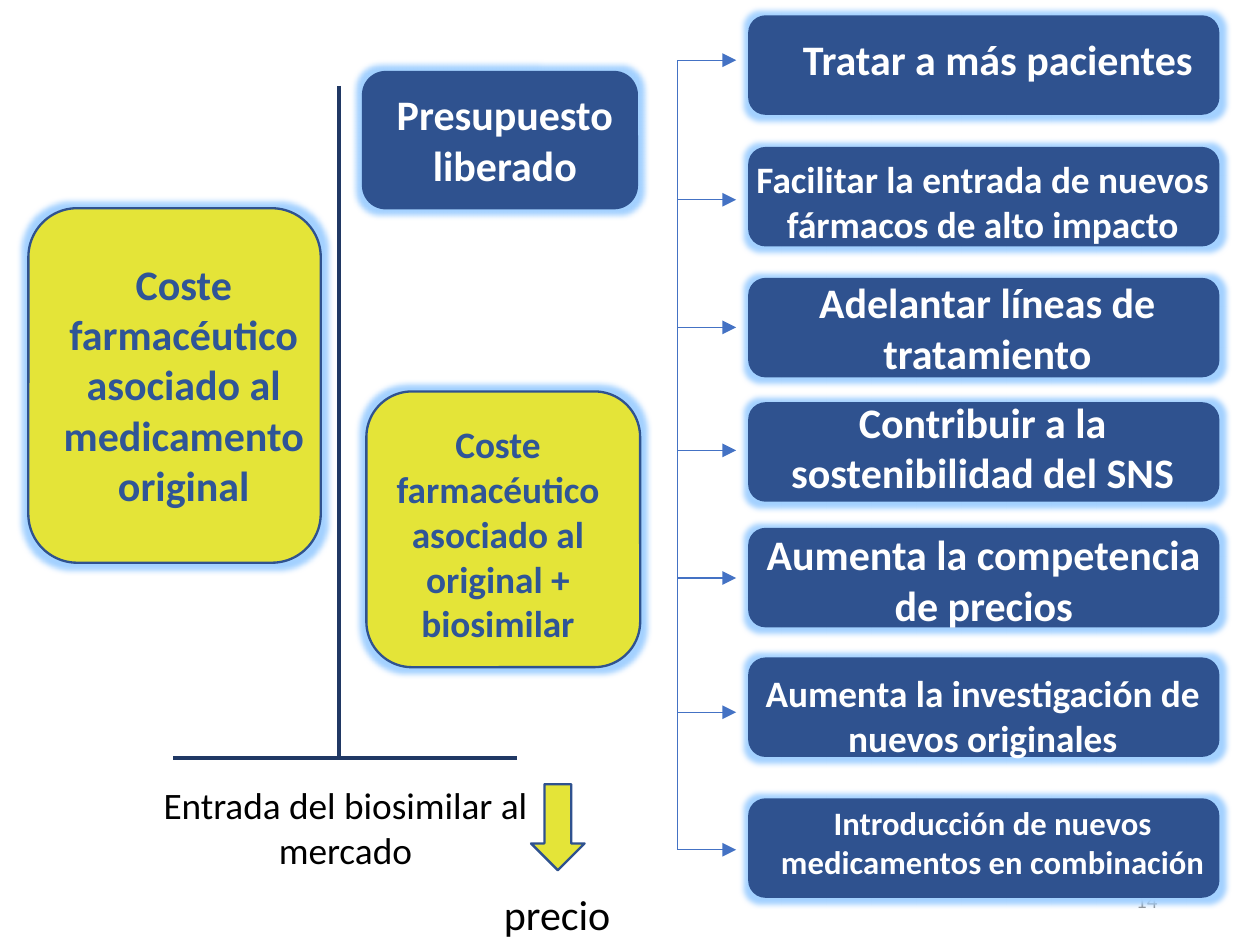
from lxml import etree
from pptx import Presentation
from pptx.dml.color import RGBColor
from pptx.enum.shapes import MSO_CONNECTOR, MSO_SHAPE
from pptx.enum.text import MSO_ANCHOR, PP_ALIGN
from pptx.oxml.ns import qn
from pptx.util import Cm, Pt

STRAIGHT = MSO_CONNECTOR.STRAIGHT
ROUNDED, DOWN_ARROW = MSO_SHAPE.ROUNDED_RECTANGLE, MSO_SHAPE.DOWN_ARROW
LEFT, CENTER, RIGHT = PP_ALIGN.LEFT, PP_ALIGN.CENTER, PP_ALIGN.RIGHT
TOP, MIDDLE = MSO_ANCHOR.TOP, MSO_ANCHOR.MIDDLE

COLORS = {
    "blue": "2F528F", "lime": "E4E438", "cost": "2F5597", "axis": "203864",
    "branch": "4472C4", "glow": "A3D1FF", "white": "FFFFFF",
    "black": "000000", "number": "8C8C8C",
}
BENEFIT_LEFT, BENEFIT_WIDTH, BENEFIT_HEIGHT = 11.33, 7.09, 1.47
SPINE_X, BRANCH_LENGTH = 10.24, 0.89

# wording, size, box top, label (left, top, width, height), arrow height
BENEFITS = [
    ("Tratar a más pacientes", 18, 0.25, (11.13, 0.38, 7.92, 1.02), 0.91),
    ("Facilitar la entrada de nuevos fármacos de alto impacto", 16, 2.24,
     (10.9, 2.24, 7.92, 1.63), 3.02),
    ("Adelantar líneas de tratamiento", 18, 4.22, (10.97, 4.06, 7.92, 1.8), 4.95),
    ("Contribuir a la sostenibilidad del SNS", 18, 6.1, (10.9, 5.87, 7.92, 1.8), 6.81),
    ("Aumenta la competencia de precios", 18, 8, (11.33, 7.87, 7.09, 1.8), 8.74),
    ("Aumenta la investigación de nuevos originales", 16, 9.96,
     (10.9, 10.01, 7.92, 1.63), 10.77),
    ("Introducción de nuevos medicamentos en combinación", 14, 12.09,
     (10.97, 12.01, 8.08, 1.45), 12.85),
]
# wording, size, fill, text colour, box, label
BUDGET_BLOCKS = [
    ("Coste farmacéutico asociado al medicamento original", 18, "lime", "cost",
     (0.43, 3.15, 4.42, 5.36), (0.43, 3.78, 4.7, 4.11)),
    ("Presupuesto liberado", 18, "blue", "white",
     (5.49, 1.09, 4.14, 2.06), (5.31, 1.22, 4.65, 1.8)),
    ("Coste farmacéutico asociado al original + biosimilar", 16, "lime", "cost",
     (5.54, 5.92, 4.14, 4.17), (5.18, 6.25, 4.7, 3.68)),
]


def rgb(name):
    return RGBColor.from_string(COLORS[name])


class BudgetSlide:
    """Holds the text style and the slide being drawn; lengths are in cm."""

    font = "Calibri"

    def __init__(self, slide):
        self.slide = slide

    def label(self, wording, area, size, color, bold=False, align=CENTER, anchor=TOP):
        box = self.slide.shapes.add_textbox(*map(Cm, area))
        frame = box.text_frame
        frame.word_wrap = True
        frame.vertical_anchor = anchor
        frame.text = wording
        paragraph = frame.paragraphs[0]
        paragraph.alignment = align
        font = paragraph.runs[0].font
        font.name, font.size, font.bold = self.font, Pt(size), bold
        font.color.rgb = rgb(color)

    def shape(self, preset, area, fill):
        shape = self.slide.shapes.add_shape(preset, *map(Cm, area))
        shape.shadow.inherit = False
        shape.fill.solid()
        shape.fill.fore_color.rgb = rgb(fill)
        shape.line.color.rgb = rgb("blue")
        shape.line.width = Pt(1)
        return shape

    def glowing_box(self, area, fill):
        box = self.shape(ROUNDED, area, fill)
        effects = box._element.spPr.find(qn("a:effectLst"))
        glow = etree.SubElement(effects, qn("a:glow"), rad=str(Pt(5)))
        etree.SubElement(glow, qn("a:srgbClr"), val=COLORS["glow"])

    def line(self, start, end, color, width, arrow=False):
        line = self.slide.shapes.add_connector(STRAIGHT, *map(Cm, start + end))
        line.line.color.rgb = rgb(color)
        line.line.width = Pt(width)
        properties = line._element.spPr
        if arrow:
            etree.SubElement(properties.find(qn("a:ln")), qn("a:tailEnd"), type="triangle")
        etree.SubElement(properties, qn("a:effectLst"))


def main():
    deck = Presentation()
    deck.slide_width, deck.slide_height = Cm(19.05), Cm(14.29)
    page = BudgetSlide(deck.slides.add_slide(deck.slide_layouts[6]))

    page.label("14", (13.46, 13.23, 4.29, 0.76), 9, "number", align=RIGHT, anchor=MIDDLE)

    page.line((5.13, 1.3), (5.13, 11.46), "axis", 1.75)
    page.line((7.82, 11.46), (2.62, 11.46), "axis", 1.75)
    for wording, size, fill, color, box, label in BUDGET_BLOCKS:
        page.glowing_box(box, fill)
        page.label(wording, label, size, color, bold=True)

    page.label("Entrada del biosimilar al mercado", (2.01, 11.71, 6.43, 1.63), 16, "black")
    page.shape(DOWN_ARROW, (8.03, 11.86, 0.81, 1.3), "lime")
    page.label("precio", (7.37, 13.31, 2.13, 1.02), 18, "black", align=LEFT)

    for wording, size, top, label, _ in BENEFITS:
        page.glowing_box((BENEFIT_LEFT, top, BENEFIT_WIDTH, BENEFIT_HEIGHT), "blue")
        page.label(wording, label, size, "white", bold=True)

    arrow_heights = [benefit[-1] for benefit in BENEFITS]
    page.line((SPINE_X, arrow_heights[0]), (SPINE_X, arrow_heights[-1]), "branch", 0.5)
    for y in arrow_heights:
        page.line((SPINE_X, y), (SPINE_X + BRANCH_LENGTH, y), "branch", 0.5, arrow=True)

    deck.save("out.pptx")


if __name__ == "__main__":
    main()
